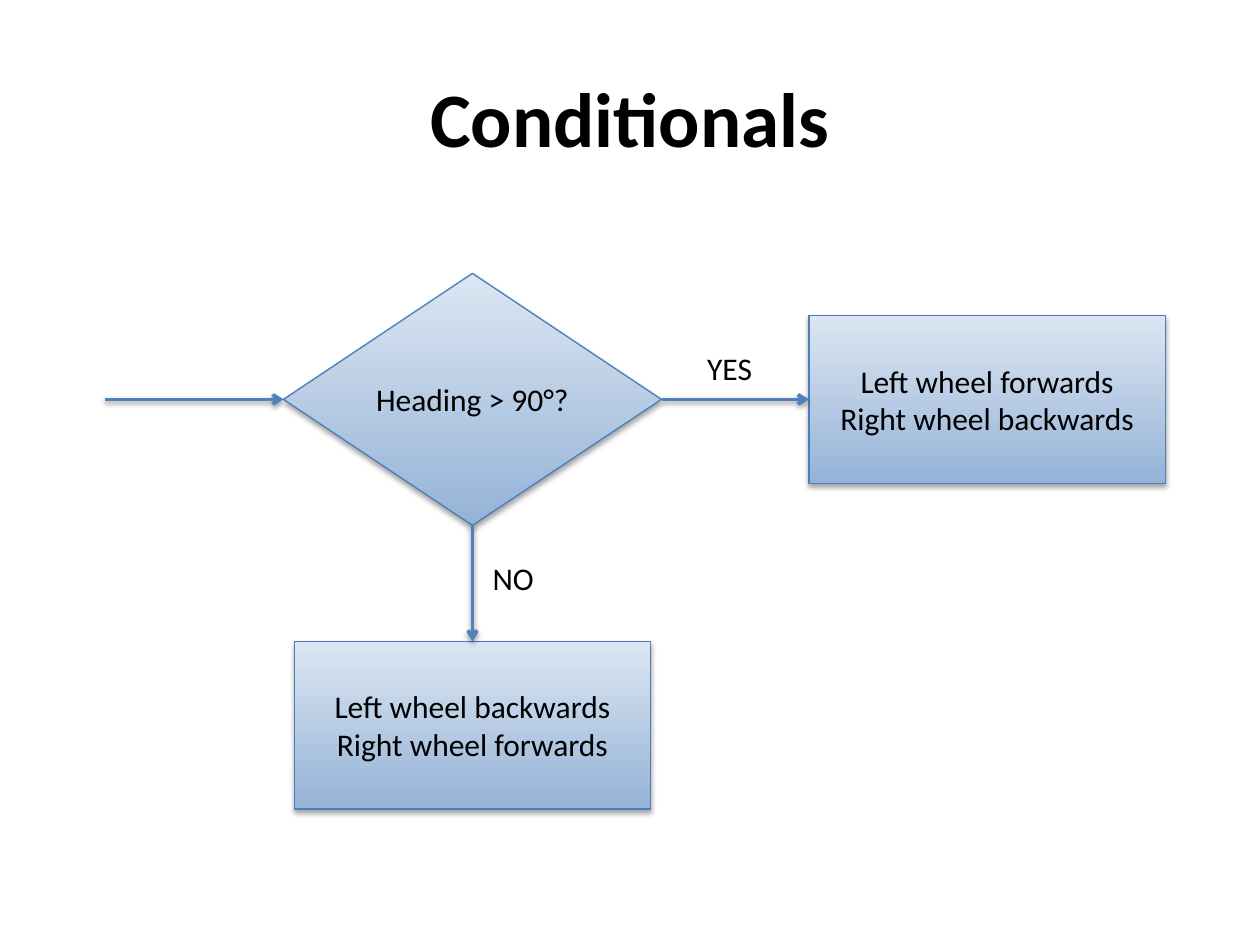
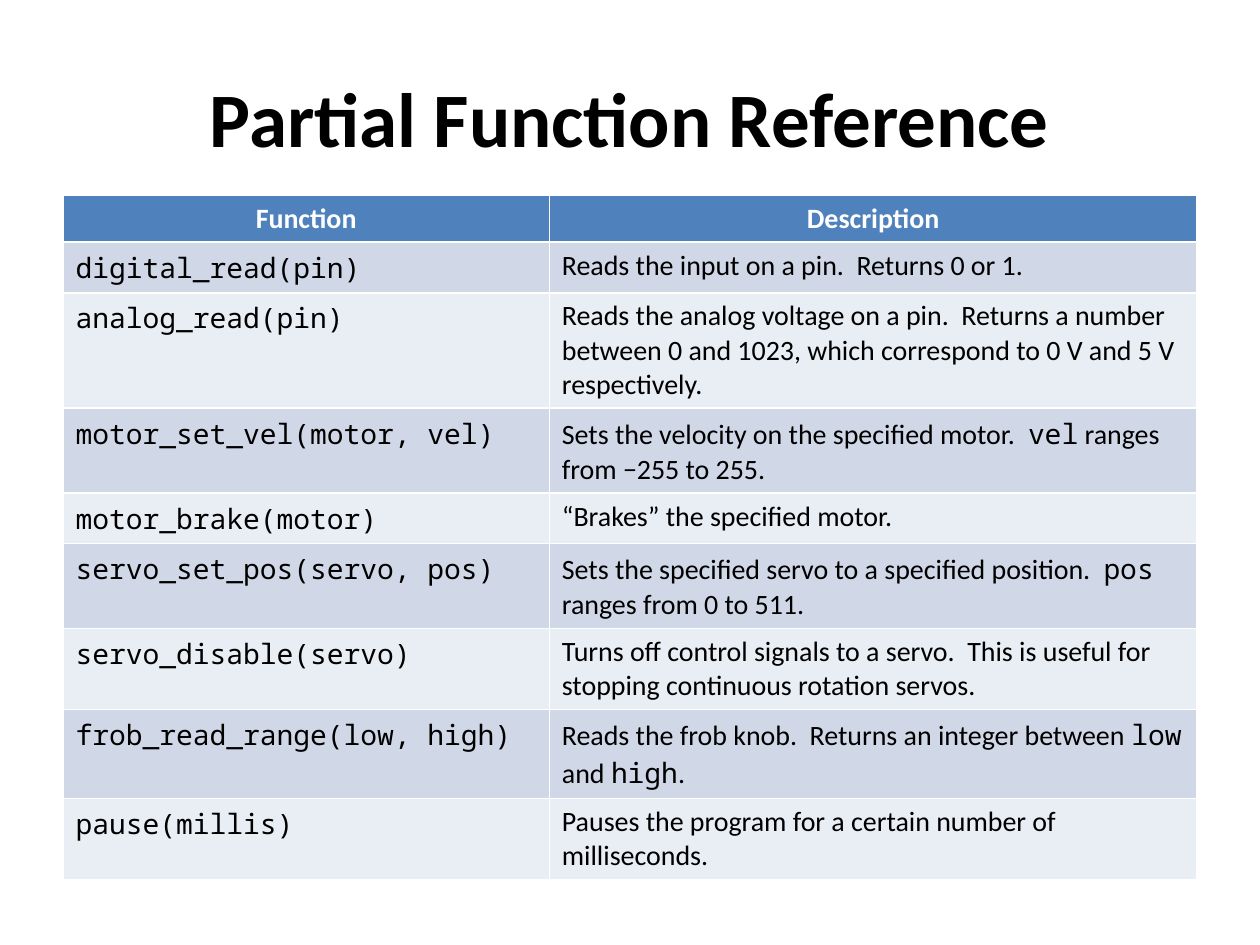
from lxml import etree
from pptx import Presentation
from pptx.dml.color import RGBColor
from pptx.enum import shapes, text
from pptx.oxml.ns import qn
from pptx.util import Inches, Pt

COLORS = {
    "text": "000000",
    "white": "FFFFFF",
    "accent": "4F81BD",
    "outline": "4B7EBC",
    "gradient_bottom": "95B3D7",
    "gradient_top": "DCE6F2",
    "band_dark": "D0D8E8",
    "band_light": "E9EDF4",
}
BODY_FONT = "Calibri"
CODE_FONT = "Noto Sans Mono"
TITLE_ONLY = 5

# Backticks mark code.
FUNCTIONS = [
    ("`digital_read(pin)`", "Reads the input on a pin.  Returns 0 or 1."),
    ("`analog_read(pin)`",
     "Reads the analog voltage on a pin.  Returns a number between 0 and 1023, "
     "which correspond to 0 V and 5 V respectively."),
    ("`motor_set_vel(motor, vel)`",
     "Sets the velocity on the specified motor.  `vel` ranges from −255 to 255."),
    ("`motor_brake(motor)`", "“Brakes” the specified motor."),
    ("`servo_set_pos(servo, pos)`",
     "Sets the specified servo to a specified position.  `pos` ranges from 0 to 511."),
    ("`servo_disable(servo)`",
     "Turns off control signals to a servo.  This is useful for stopping "
     "continuous rotation servos."),
    ("`frob_read_range(low, high)`",
     "Reads the frob knob.  Returns an integer between `low` and `high`."),
    ("`pause(millis)`", "Pauses the program for a certain number of milliseconds."),
]


def rgb(name):
    return RGBColor.from_string(COLORS[name])


def set_font(font, size, color="text", bold=False, name=BODY_FONT):
    font.name = name
    font.size = Pt(size)
    font.bold = bold
    font.color.rgb = rgb(color)


def add_titled_slide(presentation, title):
    slide = presentation.slides.add_slide(presentation.slide_layouts[TITLE_ONLY])
    placeholder = slide.shapes.title
    placeholder.left, placeholder.top = Inches(0.5), Inches(0.3)
    placeholder.width, placeholder.height = Inches(9), Inches(1.25)
    placeholder.text_frame.text = title
    placeholder.text_frame.vertical_anchor = text.MSO_ANCHOR.MIDDLE
    paragraph = placeholder.text_frame.paragraphs[0]
    paragraph.alignment = text.PP_ALIGN.CENTER
    set_font(paragraph.font, 44, bold=True)
    return slide


def add_shadow(shape, opacity, distance):
    """Give a shape or connector a soft shadow straight below it."""
    effects = etree.SubElement(shape.element.spPr, qn("a:effectLst"))
    shadow = etree.SubElement(
        effects, qn("a:outerShdw"), blurRad=str(Pt(3.1)), dist=str(Pt(distance)),
        dir="5400000", rotWithShape="0")
    color = etree.SubElement(shadow, qn("a:srgbClr"), val=COLORS["text"])
    etree.SubElement(color, qn("a:alpha"), val=str(opacity * 1000))


def write_lines(shape, lines, alignment=text.PP_ALIGN.CENTER, wrap=True):
    frame = shape.text_frame
    frame.text = "\n".join(lines)
    frame.word_wrap = wrap
    frame.vertical_anchor = text.MSO_ANCHOR.MIDDLE
    for paragraph in frame.paragraphs:
        paragraph.alignment = alignment
        set_font(paragraph.font, 18)


def add_step(slide, kind, left, top, width, height, lines, wrap=True):
    step = slide.shapes.add_shape(
        kind, Inches(left), Inches(top), Inches(width), Inches(height))
    step.fill.gradient()
    step.fill.gradient_angle = 90
    for stop, color in zip(step.fill.gradient_stops, ("gradient_bottom", "gradient_top")):
        stop.color.rgb = rgb(color)
    step.line.color.rgb = rgb("outline")
    step.line.width = Pt(0.75)
    add_shadow(step, 35, 1.8)
    write_lines(step, lines, wrap=wrap)
    return step


def add_label(slide, left, top, width, height, label, alignment):
    box = slide.shapes.add_textbox(
        Inches(left), Inches(top), Inches(width), Inches(height))
    write_lines(box, [label], alignment)
    return box


def add_arrow(slide, end_step, end_site, start_step=None, start_site=None, start=(0, 0)):
    """Run an arrow to a step, from another step or from a free point in inches."""
    x, y = (Inches(value) for value in start)
    arrow = slide.shapes.add_connector(shapes.MSO_CONNECTOR.STRAIGHT, x, y, x, y)
    if start_step is not None:
        arrow.begin_connect(start_step, start_site)
    arrow.end_connect(end_step, end_site)
    arrow.line.color.rgb = rgb("accent")
    arrow.line.width = Pt(2)
    etree.SubElement(arrow.element.spPr.find(qn("a:ln")), qn("a:tailEnd"), type="arrow")
    add_shadow(arrow, 38, 1.6)


def draw_decision_flow(slide, left, top):
    decision_width, decision_height = 3, 2
    step_width, step_height = 2.83, 1.33
    decision_left = left + 1.42
    decision_right = decision_left + decision_width
    decision_bottom = top + decision_height
    center_x = decision_left + decision_width / 2
    center_y = top + decision_height / 2

    process = shapes.MSO_SHAPE.FLOWCHART_PROCESS
    decision = add_step(
        slide, shapes.MSO_SHAPE.FLOWCHART_DECISION, decision_left, top,
        decision_width, decision_height, ["Heading > 90°?"], wrap=False)
    yes_step = add_step(
        slide, process, decision_right + 1.17, center_y - step_height / 2,
        step_width, step_height, ["Left wheel forwards", "Right wheel backwards"])
    no_step = add_step(
        slide, process, center_x - step_width / 2, decision_bottom + 0.92,
        step_width, step_height, ["Left wheel backwards", "Right wheel forwards"])

    add_arrow(slide, yes_step, 1, decision, 3)
    add_arrow(slide, no_step, 0, decision, 2)
    add_arrow(slide, decision, 1, start=(left, center_y))

    add_label(slide, decision_right, center_y - 0.5, 1.08, 0.5, "YES",
              text.PP_ALIGN.CENTER)
    no_label = add_label(slide, center_x, decision_bottom, 1.17, 0.83, "NO",
                         text.PP_ALIGN.LEFT)
    no_label.text_frame.margin_left = Inches(0.16)


def fill_cell(cell, content, fill, color="text", bold=False,
              alignment=text.PP_ALIGN.LEFT):
    cell.fill.solid()
    cell.fill.fore_color.rgb = rgb(fill)
    paragraph = cell.text_frame.paragraphs[0]
    paragraph.alignment = alignment
    for index, part in enumerate(content.split("`")):
        if part:
            run = paragraph.add_run()
            run.text = part
            set_font(run.font, 16, color, bold, CODE_FONT if index % 2 else BODY_FONT)


def draw_function_table(slide, left, top, column_widths, row_height):
    row_count = len(FUNCTIONS) + 1
    table = slide.shapes.add_table(
        row_count, len(column_widths), Inches(left), Inches(top),
        Inches(sum(column_widths)), Inches(row_height * row_count)).table
    for column, width in zip(table.columns, column_widths):
        column.width = Inches(width)
    for index, heading in enumerate(("Function", "Description")):
        fill_cell(table.cell(0, index), heading, "accent", "white", True,
                  text.PP_ALIGN.CENTER)
    for row, contents in enumerate(FUNCTIONS, start=1):
        band = "band_dark" if row % 2 else "band_light"
        for column, content in enumerate(contents):
            fill_cell(table.cell(row, column), content, band)


def main():
    presentation = Presentation()
    presentation.slide_width = Inches(10)
    presentation.slide_height = Inches(7.5)
    draw_decision_flow(add_titled_slide(presentation, "Conditionals"), 0.83, 2.17)
    draw_function_table(add_titled_slide(presentation, "Partial Function Reference"),
                        0.5, 1.55, (3.86, 5.14), 0.35)
    presentation.save("out.pptx")


if __name__ == "__main__":
    main()
